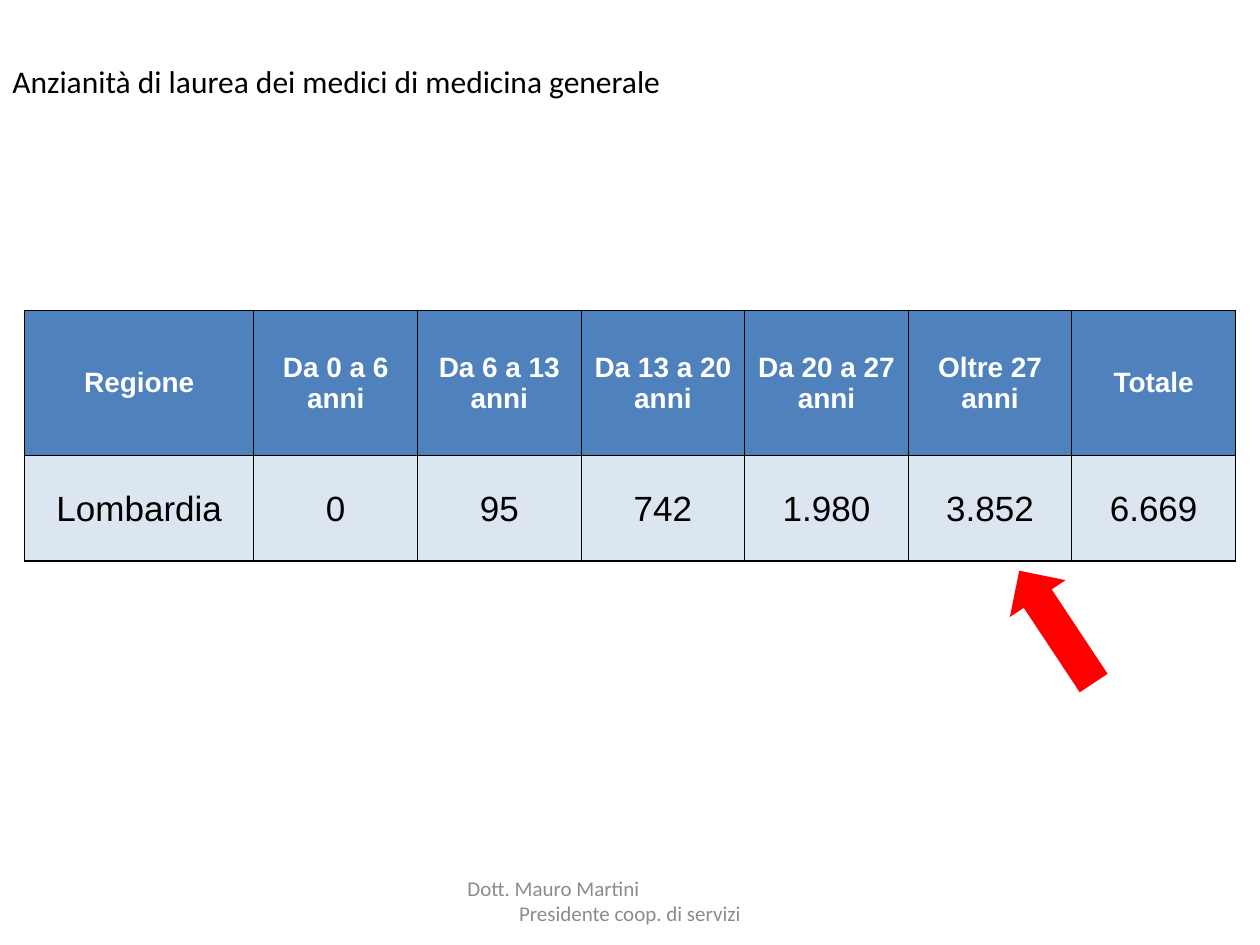
"""Build the slide on years since graduation of general practitioners."""
from dataclasses import dataclass, field
from typing import Any

from lxml.etree import SubElement
from pptx import Presentation
from pptx.dml.color import RGBColor
from pptx.enum.shapes import MSO_SHAPE as SHAPE
from pptx.enum.text import MSO_ANCHOR as ANCHOR, PP_ALIGN as ALIGN
from pptx.oxml.ns import qn
from pptx.util import Pt


@dataclass
class Style:
    color: str
    fmt: dict[str, Any]


@dataclass
class Line:
    text: str
    align: Any = ALIGN.LEFT
    indent: float = 0


@dataclass
class Label:
    box: tuple[float, float, float, float]
    lines: list[Line]
    style: Style
    anchor: Any = ANCHOR.TOP


@dataclass
class Row:
    height: float
    fill: str
    style: Style
    bottom: float
    values: list[str] = field(default_factory=list)


def rgb(value: str) -> RGBColor:
    return RGBColor.from_string(value)


def write(p: Any, line: Line, style: Style) -> None:
    p.alignment = line.align
    if line.indent:
        p._p.get_or_add_pPr().set("marL", str(Pt(line.indent)))
    r = p.add_run()
    r.text = line.text
    for name, value in style.fmt.items():
        setattr(r.font, name, value)
    r.font.color.rgb = rgb(style.color)


def add_label(slide: Any, label: Label) -> None:
    tf = slide.shapes.add_textbox(*map(Pt, label.box)).text_frame
    tf.word_wrap = True
    tf.vertical_anchor = label.anchor
    for i, line in enumerate(label.lines):
        write(tf.add_paragraph() if i else tf.paragraphs[0], line, label.style)


def add_borders(cell: Any, widths: dict[str, float]) -> None:
    tc_pr = cell._tc.get_or_add_tcPr()
    for side, width in widths.items():
        ln = SubElement(tc_pr, qn(f"a:ln{side}"), w=str(Pt(width)))
        SubElement(SubElement(ln, qn("a:solidFill")), qn("a:srgbClr"), val="000000")


def add_grid(slide: Any, left: float, top: float, widths: list[float], rows: list[Row]) -> None:
    size = sum(widths), sum(row.height for row in rows)
    table = slide.shapes.add_table(len(rows), len(widths), *map(Pt, (left, top, *size))).table
    for column, width in zip(table.columns, widths):
        column.width = Pt(width)
    margins = {"margin_left": Pt(0.7), "margin_right": Pt(0.7), "margin_top": Pt(0.7), "margin_bottom": 0}
    for i, row in enumerate(rows):
        table.rows[i].height = Pt(row.height)
        for j, value in enumerate(row.values):
            cell = table.cell(i, j)
            for name, amount in margins.items():
                setattr(cell, name, amount)
            cell.vertical_anchor = ANCHOR.MIDDLE
            add_borders(cell, {"L": 0.5, "R": 0.5, "T": 0.5, "B": row.bottom})
            cell.fill.solid()
            cell.fill.fore_color.rgb = rgb(row.fill)
            write(cell.text_frame.paragraphs[0], Line(value, ALIGN.CENTER), row.style)


def add_arrow(slide: Any, box: tuple[float, ...], rotation: float, color: str) -> None:
    sp = slide.shapes.add_shape(SHAPE.RIGHT_ARROW, *map(Pt, box))
    sp.rotation = rotation
    sp.shadow.inherit = False
    sp.fill.solid()
    sp.fill.fore_color.rgb = rgb(color)
    sp.line.fill.background()


def main() -> None:
    prs = Presentation()
    prs.slide_width, prs.slide_height = Pt(720), Pt(540)
    slide = prs.slides.add_slide(prs.slide_layouts[6])

    head = Style("FFFFFF", {"name": "Arial", "size": Pt(16), "bold": True})
    body = Style("000000", {"name": "Arial", "size": Pt(20), "bold": False})
    title = Style("000000", {"name": "Calibri", "size": Pt(18)})
    footer = Style("8C8C8C", {"name": "Calibri", "size": Pt(12)})

    add_arrow(slide, (565.2, 339.1, 77, 38.2), 236.5, "FF0000")
    add_grid(slide, 14.1, 177.2, [131] + [93.5] * 6, [
        Row(83, "4F81BD", head, 0.5, ["Regione", "Da 0 a 6 anni", "Da 6 a 13 anni", "Da 13 a 20 anni",
                                      "Da 20 a 27 anni", "Oltre 27 anni", "Totale"]),
        Row(60.5, "DCE6F1", body, 1, ["Lombardia", "0", "95", "742", "1.980", "3.852", "6.669"]),
    ])
    add_label(slide, Label((0, 31.7, 720, 46), [
        Line("Anzianità di laurea dei medici di medicina generale")], title))
    add_label(slide, Label((246, 500.4, 228, 28.8), [
        Line("Dott. Mauro Martini", indent=14),
        Line("Presidente coop. di servizi", ALIGN.CENTER)], footer, ANCHOR.MIDDLE))
    prs.save("out.pptx")


if __name__ == "__main__":
    main()
